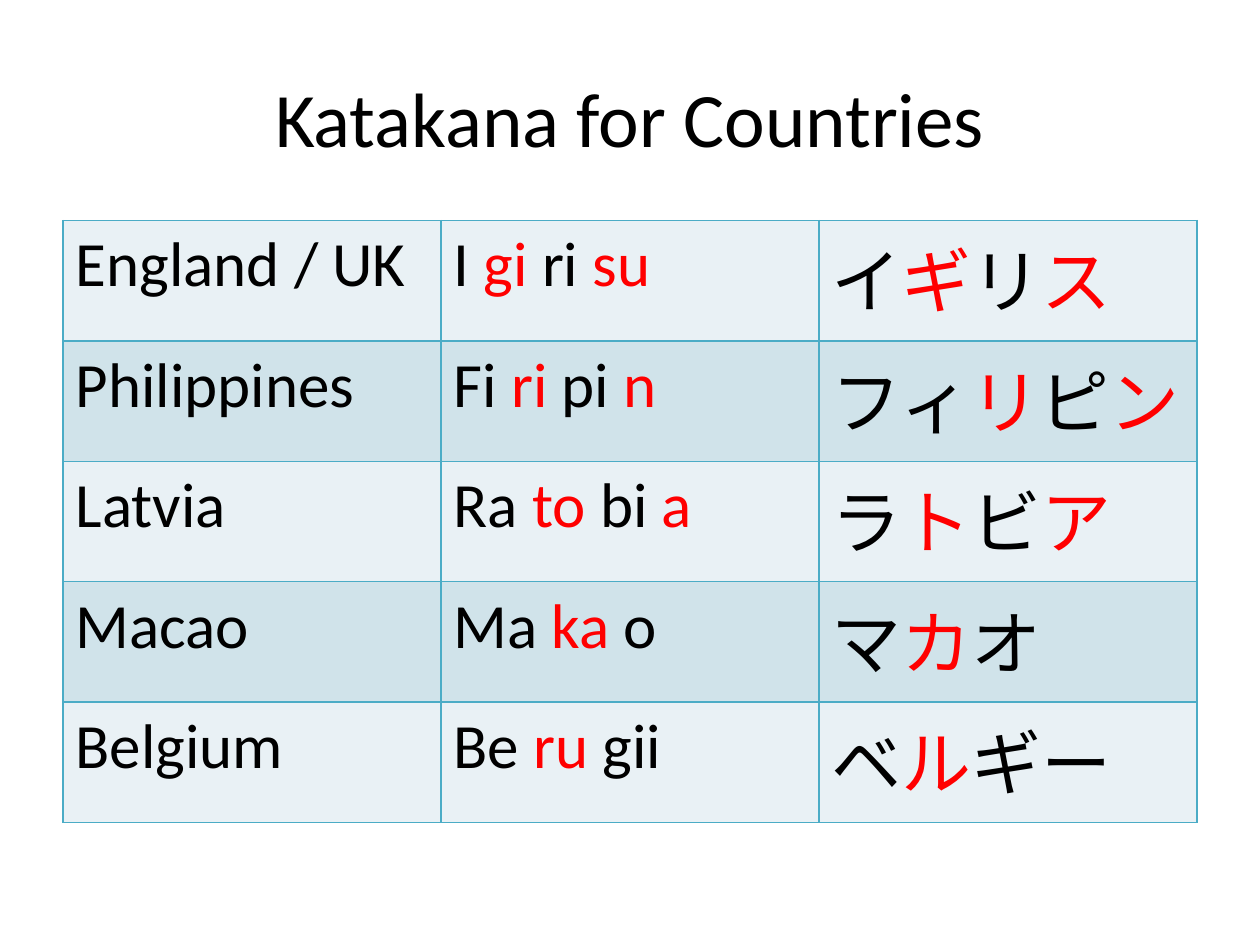
from typing import NamedTuple

from lxml import etree
from pptx import Presentation
from pptx.dml.color import RGBColor
from pptx.enum import text
from pptx.oxml import ns
from pptx.util import Pt

FONT = "Calibri"
BLACK, RED, BORDER = "000000", "FF0000", "4BACC6"
BANDS = ("E9F1F5", "D0E3EA")
SIZES = (36, 36, 40)
COL_W, ROW_H = 216, 68.8


class Country(NamedTuple):
    """Runs are parted by "|" and alternate between black and red."""
    english: str
    romaji: str
    katakana: str


COUNTRIES = [
    Country("England / UK", "I |gi |ri |su", "イ|ギ|リ|ス"),
    Country("Philippines", "Fi |ri| pi |n", "フィ|リ|ピ|ン"),
    Country("Latvia", "Ra |to| bi |a", "ラ|ト|ビ|ア"),
    Country("Macao", "Ma |ka| o", "マ|カ|オ"),
    Country("Belgium", "Be |ru |gii", "ベ|ル|ギー"),
]


def rgb(value: str) -> RGBColor:
    return RGBColor.from_string(value)


def write(p, marked: str, size: float) -> None:
    """Add the runs of a marked string, alternating black and red."""
    for i, part in enumerate(marked.split("|")):
        r = p.add_run()
        r.text = part
        for name, value in {"name": FONT, "size": Pt(size)}.items():
            setattr(r.font, name, value)
        r.font.color.rgb = rgb((BLACK, RED)[i % 2])


def add_borders(cell, color: str, width: float) -> None:
    tc_pr = cell._tc.get_or_add_tcPr()
    for i, side in enumerate(("lnL", "lnR", "lnT", "lnB")):
        ln = etree.Element(ns.qn(f"a:{side}"), w=str(Pt(width)))
        fill = etree.SubElement(ln, ns.qn("a:solidFill"))
        etree.SubElement(fill, ns.qn("a:srgbClr"), val=color)
        tc_pr.insert(i, ln)


def add_title(s, title: str) -> None:
    tf = s.shapes.add_textbox(Pt(36), Pt(21.6), Pt(648), Pt(90)).text_frame
    settings = {"word_wrap": True, "vertical_anchor": text.MSO_ANCHOR.MIDDLE}
    for name, value in settings.items():
        setattr(tf, name, value)
    p = tf.paragraphs[0]
    p.alignment = text.PP_ALIGN.CENTER
    write(p, title, 44)


def add_country_table(s, countries: list[Country]) -> None:
    rows, cols = len(countries), len(SIZES)
    table = s.shapes.add_table(rows, cols, Pt(36), Pt(126),
                               Pt(COL_W * cols), Pt(ROW_H * rows)).table
    for i, country in enumerate(countries):
        table.rows[i].height = Pt(ROW_H)
        for j, (marked, size) in enumerate(zip(country, SIZES)):
            cell = table.cell(i, j)
            cell.fill.solid()
            cell.fill.fore_color.rgb = rgb(BANDS[i % 2])
            add_borders(cell, BORDER, 1)
            write(cell.text_frame.paragraphs[0], marked, size)


def main() -> None:
    prs = Presentation()
    prs.slide_width, prs.slide_height = Pt(720), Pt(540)
    s = prs.slides.add_slide(prs.slide_layouts[6])
    add_title(s, "Katakana for Countries")
    add_country_table(s, COUNTRIES)
    prs.save("out.pptx")


if __name__ == "__main__":
    main()
